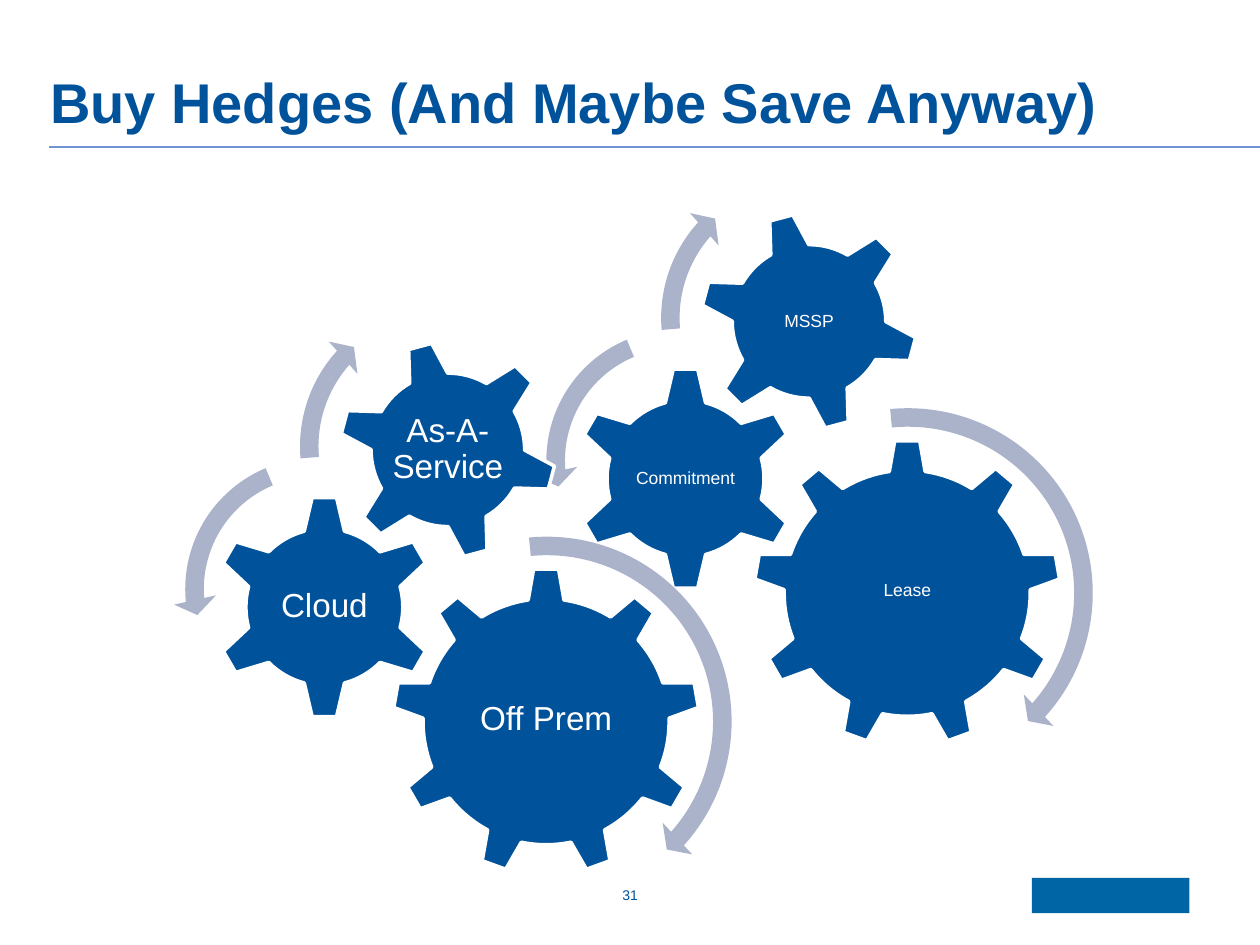
from dataclasses import dataclass

from lxml.etree import SubElement
from pptx import Presentation
from pptx.dml.color import RGBColor
from pptx.enum.shapes import MSO_CONNECTOR as Connector, MSO_SHAPE as Shape
from pptx.enum.text import MSO_ANCHOR as Anchor, PP_ALIGN as Align
from pptx.oxml.ns import qn
from pptx.util import Cm, Pt


@dataclass(frozen=True)
class Theme:
    font: str = "Arial"
    blue: RGBColor = RGBColor(0x00, 0x52, 0x9B)
    arrow: RGBColor = RGBColor(0xAB, 0xB3, 0xCB)
    rule: RGBColor = RGBColor(0x6E, 0x96, 0xD5)
    mark: RGBColor = RGBColor(0x00, 0x65, 0xA4)
    white: RGBColor = RGBColor(0xFF, 0xFF, 0xFF)
    title_size: int = 32
    large_size: int = 19
    small_size: int = 10
    number_size: int = 8


@dataclass(frozen=True)
class Gear:
    kind: Shape
    left: float
    top: float
    size: float
    label_width: float
    label_height: float
    label_shift: float = 0
    rotation: float = 0


@dataclass(frozen=True)
class Arrow:
    kind: Shape
    left: float
    top: float
    size: float
    adjustments: tuple[float, ...]


@dataclass(frozen=True)
class Cluster:
    dx: float
    dy: float
    labels: tuple[str, ...]
    text_size: int
    inset: float


THEME = Theme()
GEARS = (
    Gear(Shape.GEAR_9, 15.19, 8.86, 6.2, 3.7, 3.2, -0.05),
    Gear(Shape.GEAR_6, 11.56, 7.39, 4.52, 2.24, 2.24),
    Gear(Shape.GEAR_6, 14.1, 4.27, 4.42, 2.49, 2.49, rotation=345),
)
ARROWS = (
    Arrow(Shape.CIRCULAR_ARROW, 14.33, 7.98, 7.95, (0.047, 2.99, 25.13, 158.68, 0.055)),
    Arrow(Shape.LEFT_CIRCULAR_ARROW, 10.77, 6.4, 5.77, (0.065, 4.3, 104.89, 148.38, 0.075)),
    Arrow(Shape.CIRCULAR_ARROW, 13.08, 3.3, 6.22, (0.06, 3.94, 133.14, 105.08, 0.07)),
)
CLUSTERS = (
    Cluster(0, 0, ("Lease", "Commitment", "MSSP"), THEME.small_size, 0.03),
    Cluster(-7.28, 2.59, ("Off Prem", "Cloud", "As-A-Service"), THEME.large_size, 0.08),
)


def write_text(box, text: str, size: int, color: RGBColor, align: Align,
               anchor: Anchor, insets: tuple[float, float], bold: bool = False,
               spacing: float = 1.0) -> None:
    frame = box.text_frame
    frame.text = text
    frame.word_wrap = True
    frame.vertical_anchor = anchor
    frame.margin_left = frame.margin_right = Cm(insets[0])
    frame.margin_top = frame.margin_bottom = Cm(insets[1])
    for para in frame.paragraphs:
        para.alignment = align
        para.line_spacing = spacing
        for span in para.runs:
            span.font.name = THEME.font
            span.font.size = Pt(size)
            span.font.bold = bold
            span.font.color.rgb = color


def add_solid(page, kind: Shape, left: float, top: float, width: float,
              height: float, color: RGBColor):
    shape = page.shapes.add_shape(kind, Cm(left), Cm(top), Cm(width), Cm(height))
    shape.shadow.inherit = False
    shape.fill.solid()
    shape.fill.fore_color.rgb = color
    shape.line.fill.background()
    return shape


def add_gear(page, gear: Gear, cluster: Cluster, label: str) -> None:
    left, top = gear.left + cluster.dx, gear.top + cluster.dy
    shape = add_solid(page, gear.kind, left, top, gear.size, gear.size, THEME.blue)
    shape.rotation = gear.rotation
    shape.line.color.rgb = THEME.white
    shape.line.width = Pt(2)
    box = page.shapes.add_textbox(
        Cm(left + (gear.size - gear.label_width) / 2),
        Cm(top + (gear.size - gear.label_height) / 2 + gear.label_shift),
        Cm(gear.label_width), Cm(gear.label_height))
    write_text(box, label, cluster.text_size, THEME.white, Align.CENTER,
               Anchor.MIDDLE, (cluster.inset, cluster.inset), spacing=0.9)


def add_arrow(page, arrow: Arrow, cluster: Cluster) -> None:
    shape = add_solid(page, arrow.kind, arrow.left + cluster.dx,
                      arrow.top + cluster.dy, arrow.size, arrow.size, THEME.arrow)
    for index, value in enumerate(arrow.adjustments):
        shape.adjustments[index] = value


def add_cluster(page, cluster: Cluster) -> None:
    for gear, label in zip(GEARS, cluster.labels):
        add_gear(page, gear, cluster, label)
    for arrow in ARROWS:
        add_arrow(page, arrow, cluster)


def add_heading(page) -> None:
    rule = page.shapes.add_connector(Connector.STRAIGHT, Cm(0.99), Cm(2.97), Cm(25.4), Cm(2.97))
    rule.line.color.rgb = THEME.rule
    rule.line.width = Pt(1)
    SubElement(rule._element.spPr, qn("a:effectLst"))
    title = page.shapes.title
    title.left, title.top, title.width, title.height = Cm(0.76), Cm(0.53), Cm(23.24), Cm(2.46)
    write_text(title, "Buy Hedges (And Maybe Save Anyway)", THEME.title_size, THEME.blue,
               Align.LEFT, Anchor.BOTTOM, (0.25, 0.25), bold=True, spacing=0.9)


def add_footer(page) -> None:
    add_solid(page, Shape.RECTANGLE, 20.8, 17.7, 3.18, 0.71, THEME.mark)
    number = page.shapes.add_textbox(Cm(12.07), Cm(17.75), Cm(1.27), Cm(0.64))
    write_text(number, "31", THEME.number_size, THEME.blue, Align.CENTER,
               Anchor.TOP, (0.25, 0.13))


def main() -> None:
    deck = Presentation()
    deck.slide_width, deck.slide_height = Cm(25.4), Cm(19.05)
    page = deck.slides.add_slide(deck.slide_layouts[5])
    add_heading(page)
    add_footer(page)
    for cluster in CLUSTERS:
        add_cluster(page, cluster)
    deck.save("out.pptx")


if __name__ == "__main__":
    main()
